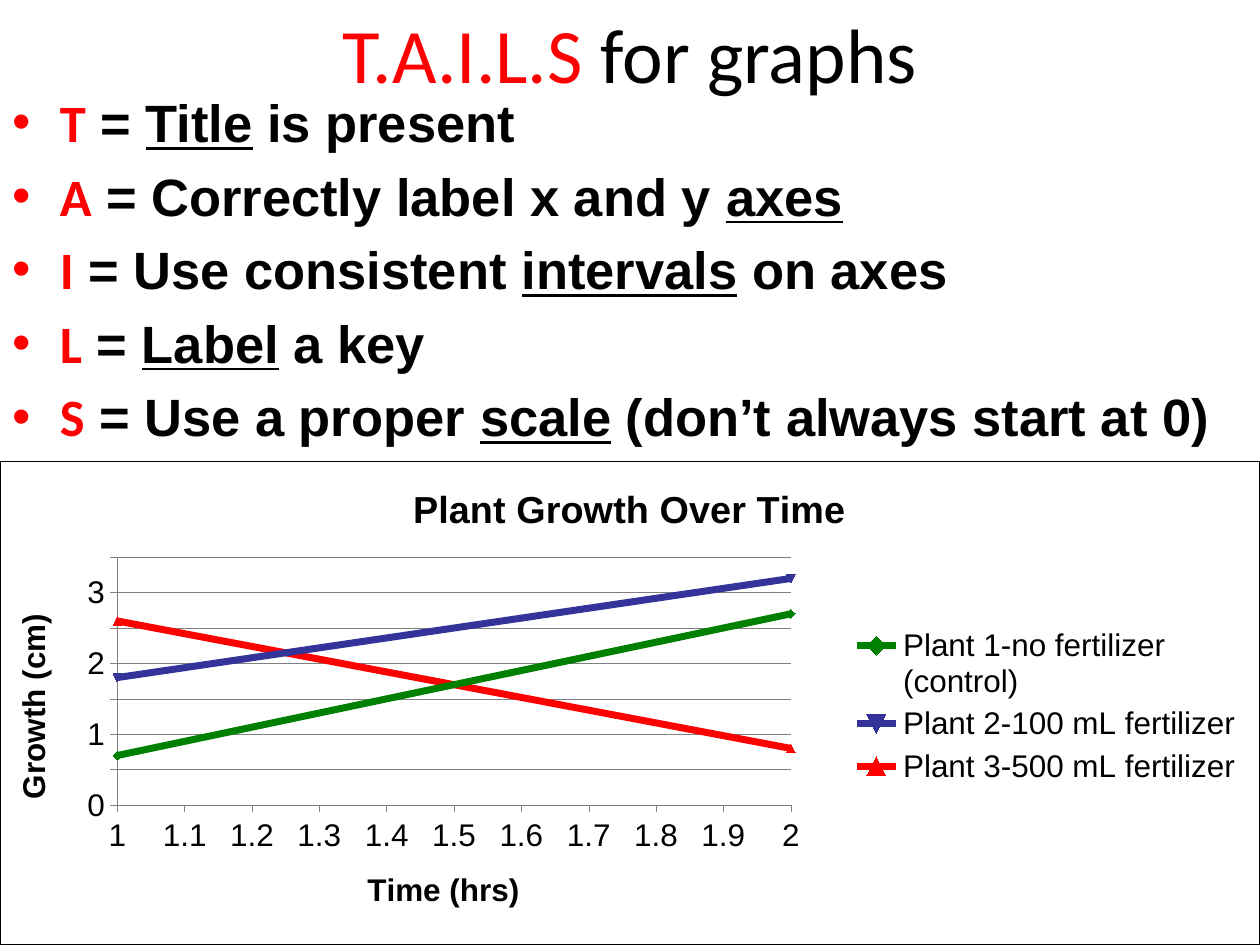
from lxml.etree import SubElement
from pptx import Presentation
from pptx.chart.data import XyChartData
from pptx.dml.color import RGBColor
from pptx.enum.chart import XL_CHART_TYPE as ChartKind
from pptx.enum.chart import XL_LEGEND_POSITION as LegendSide
from pptx.enum.chart import XL_TICK_MARK as TickMark
from pptx.enum.text import MSO_ANCHOR as Anchor
from pptx.enum.text import MSO_AUTO_SIZE as AutoSize
from pptx.oxml import parse_xml
from pptx.oxml.ns import nsdecls, qn
from pptx.util import Pt

RED, BLACK, GREEN, BLUE, GREY = "FF0000", "000000", "008000", "333399", "808080"
CHART_WIDTH, CHART_HEIGHT = 720, 276.5

# Letter, then the text before, inside and after the underline
RULES = [
    ("T", " = ", "Title", " is present"),
    ("A", " = Correctly label x and y ", "axes", ""),
    ("I", " = Use consistent ", "intervals", " on axes"),
    ("L", " = ", "Label", " a key"),
    ("S", " = Use a proper ", "scale", " (don’t always start at 0)"),
]
HOURS = (1, 2, None)  # the last reading has no time yet
PLANTS = [
    ("Plant 1-no fertilizer (control)", (0.7, 2.7, 0), GREEN),
    ("Plant 2-100 mL fertilizer ", (1.8, 3.2, 0), BLUE),
    ("Plant 3-500 mL fertilizer ", (2.6, 0.8, 0), RED),
]


def color(value):
    return RGBColor.from_string(value)


def style_font(font, size=None, face=None, fill=BLACK, bold=None, underline=None):
    if size:
        font.size = Pt(size)
    font.name = face
    font.bold = bold
    font.underline = underline
    font.color.rgb = color(fill)


def add_text(para, text, **style):
    span = para.add_run()
    span.text = text
    style_font(span.font, **style)


def set_layout(element, after=None, inner=False, **place):
    """Fix a chart part at a place given in points within the chart."""
    old = element.find(qn("c:layout"))
    if old is not None:
        element.remove(old)
    layout = parse_xml(f"<c:layout {nsdecls('c')}><c:manualLayout/></c:layout>")
    manual = layout[0]
    settings = {"layoutTarget": "inner"} if inner else {}
    settings.update(xMode="edge", yMode="edge")
    for name, value in place.items():
        settings[name] = value / (CHART_WIDTH if name in "xw" else CHART_HEIGHT)
    for name, value in settings.items():
        SubElement(manual, qn(f"c:{name}")).set("val", str(value))
    if after:
        element.find(qn(after)).addnext(layout)
    else:
        element.insert(0, layout)


class Page:
    face = "Arial"
    heading_face = "Calibri"
    chart_size = 18

    def __init__(self, deck):
        self.slide = deck.slides.add_slide(deck.slide_layouts[1])

    def place(self, box, left, top, width, height):
        box.left, box.top = Pt(left), Pt(top)
        box.width, box.height = Pt(width), Pt(height)
        box.text_frame.auto_size = AutoSize.NONE
        return box.text_frame

    def title(self, *parts):
        frame = self.place(self.slide.shapes.title, 36, 0, 648, 60)
        frame.vertical_anchor = Anchor.MIDDLE
        for text, fill in parts:
            add_text(frame.paragraphs[0], text, size=44, face=self.heading_face, fill=fill)

    def rules(self, rows):
        frame = self.place(self.slide.placeholders[1], 0, 48, 720, 306)
        for index, (letter, before, key, after) in enumerate(rows):
            para = frame.add_paragraph() if index else frame.paragraphs[0]
            add_text(para, letter, size=30, face=self.heading_face, fill=RED, bold=True)
            for text, underline in ((before, None), (key, True), (after, None)):
                if text:
                    add_text(para, text, size=30, face=self.face, bold=True,
                             underline=underline)

    def chart_title(self, owner, text, size, **place):
        owner.has_title = True
        title = owner.chart_title if hasattr(owner, "chart_title") else owner.axis_title
        add_text(title.text_frame.paragraphs[0], text, size=size, face=self.face, bold=True)
        set_layout(title._element, after="c:tx", **place)

    def axis(self, axis, low, high, step):
        axis.minimum_scale, axis.maximum_scale, axis.major_unit = low, high, step
        axis.major_tick_mark = TickMark.OUTSIDE
        axis.tick_labels.number_format = "General"
        axis.tick_labels.number_format_is_linked = False
        self.thin_line(axis.format.line)

    def thin_line(self, line):
        line.color.rgb = color(GREY)
        line.width = Pt(0.25)

    def growth_chart(self, plants):
        data = XyChartData()
        for name, growth, _ in plants:
            series = data.add_series(name)
            for hour, value in zip(HOURS, growth):
                series.add_data_point(hour, value)
        chart = self.slide.shapes.add_chart(
            ChartKind.XY_SCATTER_SMOOTH, Pt(0), Pt(263.5),
            Pt(CHART_WIDTH), Pt(CHART_HEIGHT), data).chart
        style_font(chart.font, size=self.chart_size, face=self.face)

        # Frame and plot area
        chart._chartSpace.find(qn("c:chart")).addnext(parse_xml(
            f'<c:spPr {nsdecls("c", "a")}><a:noFill/><a:ln w="9525"><a:solidFill>'
            f'<a:srgbClr val="{BLACK}"/></a:solidFill></a:ln></c:spPr>'))
        plot_area = chart._chartSpace.chart.plotArea
        set_layout(plot_area, inner=True, x=66.75, y=54.75, w=385.25, h=142)

        # Axes and titles
        self.axis(chart.category_axis, 1, 2, 0.1)
        self.axis(chart.value_axis, 0, 3.5, 0.5)
        chart.category_axis.has_major_gridlines = False
        chart.value_axis.has_major_gridlines = True
        self.thin_line(chart.value_axis.major_gridlines.format.line)
        self.chart_title(chart, "Plant Growth Over Time", 21.6, x=232, y=9.5)
        self.chart_title(chart.category_axis, "Time (hrs)", self.chart_size, x=206.5, y=230)
        self.chart_title(chart.value_axis, "Growth (cm)", self.chart_size, x=3.5, y=84)

        # Legend
        chart.has_legend = True
        chart.legend.position = LegendSide.RIGHT
        chart.legend.include_in_layout = False
        set_layout(chart.legend._element, after="c:legendPos", x=485.5, y=91, w=230, h=98)

        # Series; automatic markers follow the index, starting at the diamond
        for number, (series, plant) in enumerate(zip(chart.plots[0].series, plants), 1):
            fill = color(plant[2])
            series.smooth = True
            series.format.line.color.rgb = fill
            series.format.line.width = Pt(4)
            series.marker.size = 5
            series.marker.format.fill.solid()
            series.marker.format.fill.fore_color.rgb = fill
            series.marker.format.line.color.rgb = fill
            series._element.find(qn("c:idx")).set("val", str(number))
            # A reading without a time keeps its x cell blank
            times = series._element.find(qn("c:xVal"))
            for point in list(times.iter(qn("c:pt"))):
                if HOURS[int(point.get("idx"))] is None:
                    point.getparent().remove(point)


def main():
    deck = Presentation()
    deck.slide_width, deck.slide_height = Pt(720), Pt(540)
    page = Page(deck)
    page.title(("T.A.I.L.S ", RED), ("for graphs", BLACK))
    page.rules(RULES)
    page.growth_chart(PLANTS)
    deck.save("out.pptx")


if __name__ == "__main__":
    main()
